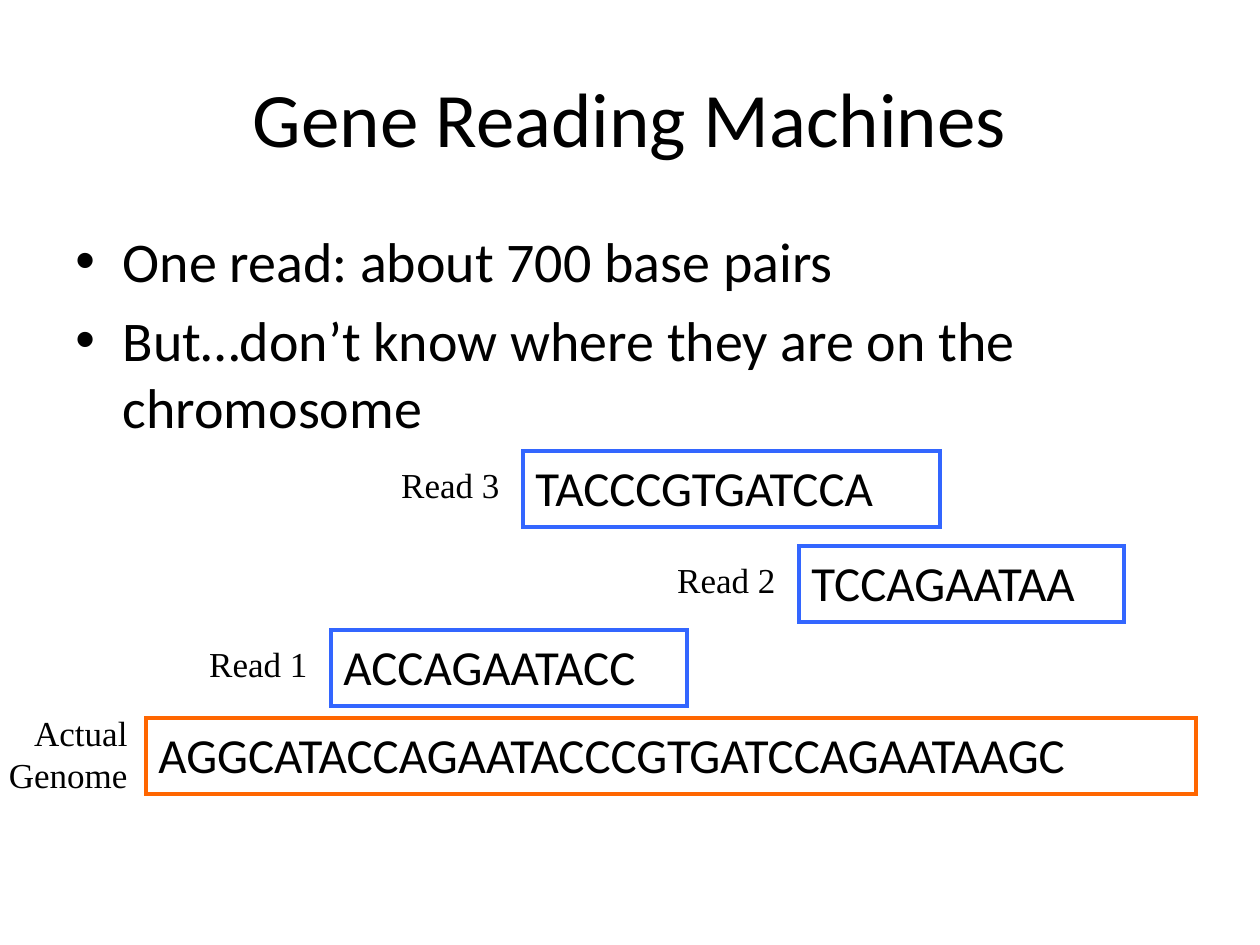
from dataclasses import dataclass

from lxml import etree
from pptx import Presentation
from pptx import util as u
from pptx.dml.color import RGBColor
from pptx.enum import shapes, text
from pptx.oxml.ns import qn

PX_PER_INCH = 126
COLORS = {"ink": "000000", "read": "3366FF", "genome": "FF6600"}
SANS, SERIF = "Calibri", "Times New Roman"
STRAND_HEIGHT = 76


@dataclass
class Area:
    left: int
    top: int
    width: int
    height: int


@dataclass
class Strand:
    bases: str
    left: int
    top: int
    width: int
    color: str
    label: str
    label_area: Area


def px(length: int) -> int:
    return round(length * u.Inches(1) / PX_PER_INCH)


def emu(area: Area) -> list[int]:
    return [px(n) for n in (area.left, area.top, area.width, area.height)]


def rgb(name: str) -> RGBColor:
    return RGBColor.from_string(COLORS[name])


def write(frame, wording: str, font: str, size: int, align) -> None:
    frame.text = wording
    for paragraph in frame.paragraphs:
        paragraph.alignment = align
        for run in paragraph.runs:
            run.font.name = font
            run.font.size = u.Pt(size)
            run.font.color.rgb = rgb("ink")


def add_text(slide, area: Area, wording: str, font: str, size: int, align):
    frame = slide.shapes.add_textbox(*emu(area)).text_frame
    frame.word_wrap = True
    write(frame, wording, font, size, align)
    return frame


def fit_to_text(frame) -> None:
    frame.word_wrap = False
    frame.auto_size = text.MSO_AUTO_SIZE.SHAPE_TO_FIT_TEXT


def add_bullet(paragraph) -> None:
    paragraph.space_before = u.Pt(7)
    properties = paragraph._p.get_or_add_pPr()
    indent = u.Inches(0.375)
    properties.set("marL", str(indent))
    properties.set("indent", str(-indent))
    etree.SubElement(properties, qn("a:buFont"), typeface="Arial")
    etree.SubElement(properties, qn("a:buChar"), char="•")


def add_strand(slide, strand: Strand) -> None:
    area = Area(strand.left, strand.top, strand.width, STRAND_HEIGHT)
    box = slide.shapes.add_shape(shapes.MSO_SHAPE.RECTANGLE, *emu(area))
    box.shadow.inherit = False
    box.fill.background()
    box.line.color.rgb = rgb(strand.color)
    box.line.width = u.Pt(2.5)
    # Square corners on the outline
    outline = box._element.spPr.find(qn("a:ln"))
    etree.SubElement(outline, qn("a:miter"), lim="800000")
    box.text_frame.vertical_anchor = text.MSO_ANCHOR.TOP
    write(box.text_frame, strand.bases, SANS, 28, text.PP_ALIGN.LEFT)
    fit_to_text(box.text_frame)

    label = add_text(slide, strand.label_area, strand.label, SERIF, 20,
                     text.PP_ALIGN.RIGHT)
    fit_to_text(label)


def read(number: int, bases: str, left: int, top: int, width: int) -> Strand:
    # The label is wide enough to stay on one line
    label_area = Area(left - 137, top + 6, 126, 54)
    return Strand(bases, left, top, width, "read", f"Read {number}", label_area)


STRANDS = [
    Strand("AGGCATACCAGAATACCCGTGATCCAGAATAAGC", 146, 718, 1050, "genome",
           "Actual\nGenome", Area(-5, 705, 145, 97)),
    read(1, "ACCAGAATACC", 331, 630, 356),
    read(2, "TCCAGAATAA", 799, 546, 325),
    read(3, "TACCCGTGATCCA", 523, 451, 417),
]


def main() -> None:
    deck = Presentation()
    deck.slide_width, deck.slide_height = px(1260), px(945)
    slide = deck.slides.add_slide(deck.slide_layouts[6])

    # Title
    title = add_text(slide, Area(63, 38, 1134, 157), "Gene Reading Machines",
                     SANS, 44, text.PP_ALIGN.CENTER)
    title.vertical_anchor = text.MSO_ANCHOR.MIDDLE

    # Key points
    points = add_text(slide, Area(63, 220, 1134, 624),
                      "One read: about 700 base pairs\n"
                      "But…don’t know where they are on the chromosome",
                      SANS, 32, text.PP_ALIGN.LEFT)
    for point in points.paragraphs:
        add_bullet(point)

    # Genome and the reads aligned above it
    for strand in STRANDS:
        add_strand(slide, strand)

    deck.save("out.pptx")


if __name__ == "__main__":
    main()
